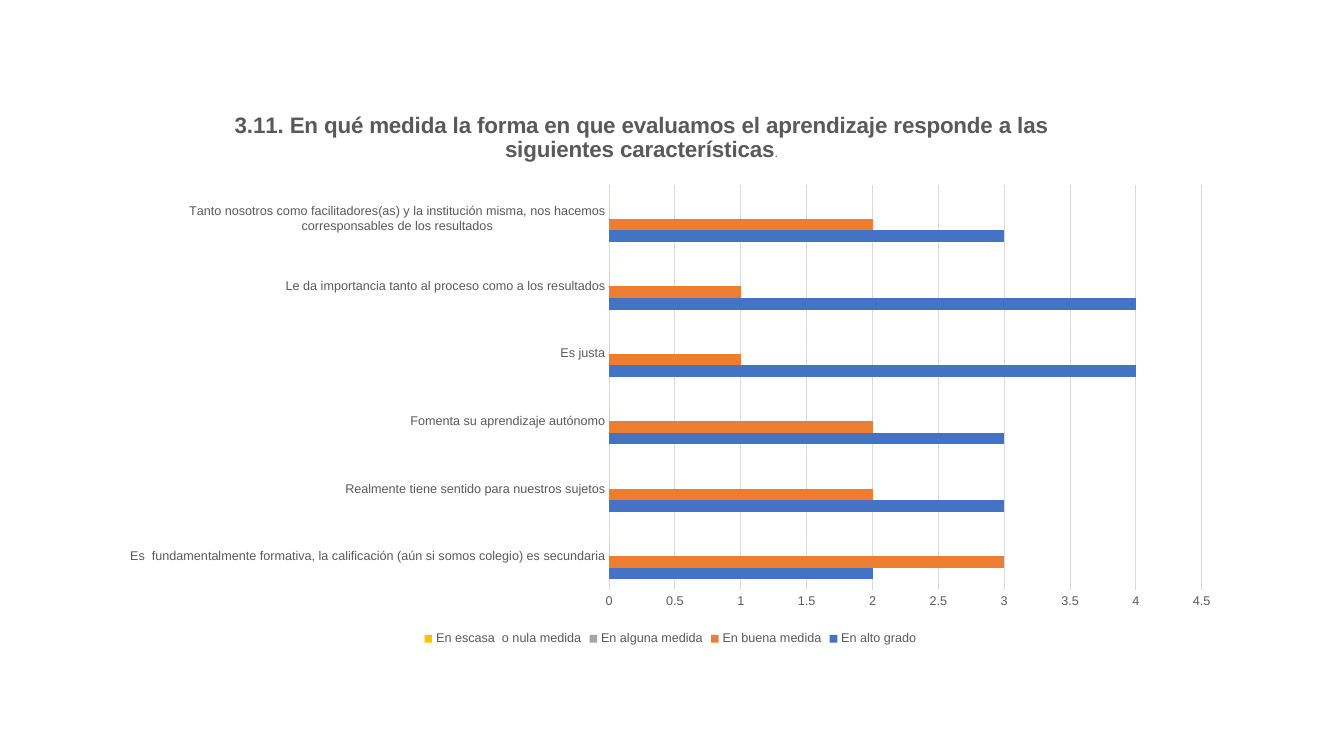
from dataclasses import dataclass

import pptx
import pptx.chart.data
import pptx.dml.color
import pptx.enum.chart
import pptx.oxml
import pptx.oxml.ns
import pptx.util
from pptx.util import Inches


@dataclass(frozen=True)
class Theme:
    font: str = "Arial"
    text: str = "595959"
    grid: str = "D9D9D9"
    title_size: int = 16
    label_size: int = 9
    line_width: float = 0.75


THEME = Theme()

TITLE = ("3.11. En qué medida la forma en que evaluamos el aprendizaje "
         "responde a las siguientes características")

FEATURES = [
    "Es  fundamentalmente formativa, la calificación (aún si somos colegio) es secundaria",
    "Realmente tiene sentido para nuestros sujetos",
    "Fomenta su aprendizaje autónomo",
    "Es justa",
    "Le da importancia tanto al proceso como a los resultados",
    "Tanto nosotros como facilitadores(as) y la institución misma, "
    "nos hacemos corresponsables de los resultados",
]

RATINGS = [
    ("En alto grado", "4472C4", (2, 3, 3, 4, 4, 3)),
    ("En buena medida", "ED7D31", (3, 2, 2, 1, 1, 2)),
    ("En alguna medida", "A5A5A5", (0,) * 6),
    ("En escasa  o nula medida", "FFC000", (0,) * 6),
]


def rgb(code):
    return pptx.dml.color.RGBColor.from_string(code)


def style_font(font, size, bold=False):
    font.name = THEME.font
    font.size = pptx.util.Pt(size)
    font.bold = bold
    font.color.rgb = rgb(THEME.text)


def style_line(line):
    line.color.rgb = rgb(THEME.grid)
    line.width = pptx.util.Pt(THEME.line_width)


def manual_layout(predecessor, **fractions):
    """Place a chart part by fractions of the chart; the layout follows predecessor."""
    settings = {"xMode": "edge", "yMode": "edge", **fractions}
    if "w" in fractions:
        settings = {"layoutTarget": "inner", **settings}
    entries = "".join(f'<c:{key} val="{value}"/>' for key, value in settings.items())
    predecessor.addnext(pptx.oxml.parse_xml(
        f'<c:layout {pptx.oxml.ns.nsdecls("c")}>'
        f"<c:manualLayout>{entries}</c:manualLayout></c:layout>"))


def remove_layouts(parent):
    for layout in parent.findall(pptx.oxml.ns.qn("c:layout")):
        parent.remove(layout)


def add_title(chart):
    chart.has_title = True
    title = chart.chart_title
    title.include_in_layout = False
    paragraph = title.text_frame.paragraphs[0]
    for text, size, bold in ((TITLE, THEME.title_size, True),
                             (".", THEME.label_size, False)):
        run = paragraph.add_run()
        run.text = text
        style_font(run.font, size, bold)
    element = chart.element.chart.find(pptx.oxml.ns.qn("c:title"))
    remove_layouts(element)
    manual_layout(element.find(pptx.oxml.ns.qn("c:tx")), x=0.11, y=0.015)


def style_axes(chart):
    for axis in (chart.category_axis, chart.value_axis):
        style_font(axis.tick_labels.font, THEME.label_size)
        axis.major_tick_mark = pptx.enum.chart.XL_TICK_MARK.NONE
        axis.minor_tick_mark = pptx.enum.chart.XL_TICK_MARK.NONE
    style_line(chart.category_axis.format.line)
    scale = chart.value_axis
    scale.minimum_scale, scale.maximum_scale, scale.major_unit = 0, 4.5, 0.5
    scale.format.line.fill.background()
    scale.has_major_gridlines = True
    style_line(scale.major_gridlines.format.line)


def add_ratings_chart(slide, left, top, width, height):
    ratings = pptx.chart.data.CategoryChartData(number_format="General")
    ratings.categories = FEATURES
    for name, _, values in RATINGS:
        ratings.add_series(name, values)
    chart = slide.shapes.add_chart(
        pptx.enum.chart.XL_CHART_TYPE.BAR_CLUSTERED,
        left, top, width, height, ratings).chart
    style_font(chart.font, THEME.label_size)
    add_title(chart)
    style_axes(chart)

    bars = chart.plots[0]
    bars.gap_width = 182
    bars.vary_by_categories = False
    for series, (_, color, _) in zip(bars.series, RATINGS):
        series.format.fill.solid()
        series.format.fill.fore_color.rgb = rgb(color)
        series.invert_if_negative = False

    plot_area = chart.element.chart.plotArea
    remove_layouts(plot_area)
    manual_layout(plot_area[0], x=0.4455, y=0.155, w=0.5267, h=0.736)
    plot_area.insert(0, plot_area.find(pptx.oxml.ns.qn("c:layout")))

    chart.has_legend = True
    chart.legend.position = pptx.enum.chart.XL_LEGEND_POSITION.BOTTOM
    chart.legend.include_in_layout = False
    style_font(chart.legend.font, THEME.label_size)


def main():
    deck = pptx.Presentation()
    deck.slide_width, deck.slide_height = Inches(13.33), Inches(7.5)
    slide = deck.slides.add_slide(deck.slide_layouts[6])
    add_ratings_chart(slide, Inches(1.07), Inches(0.99), Inches(11.16), Inches(5.46))
    deck.save("out.pptx")


if __name__ == "__main__":
    main()
